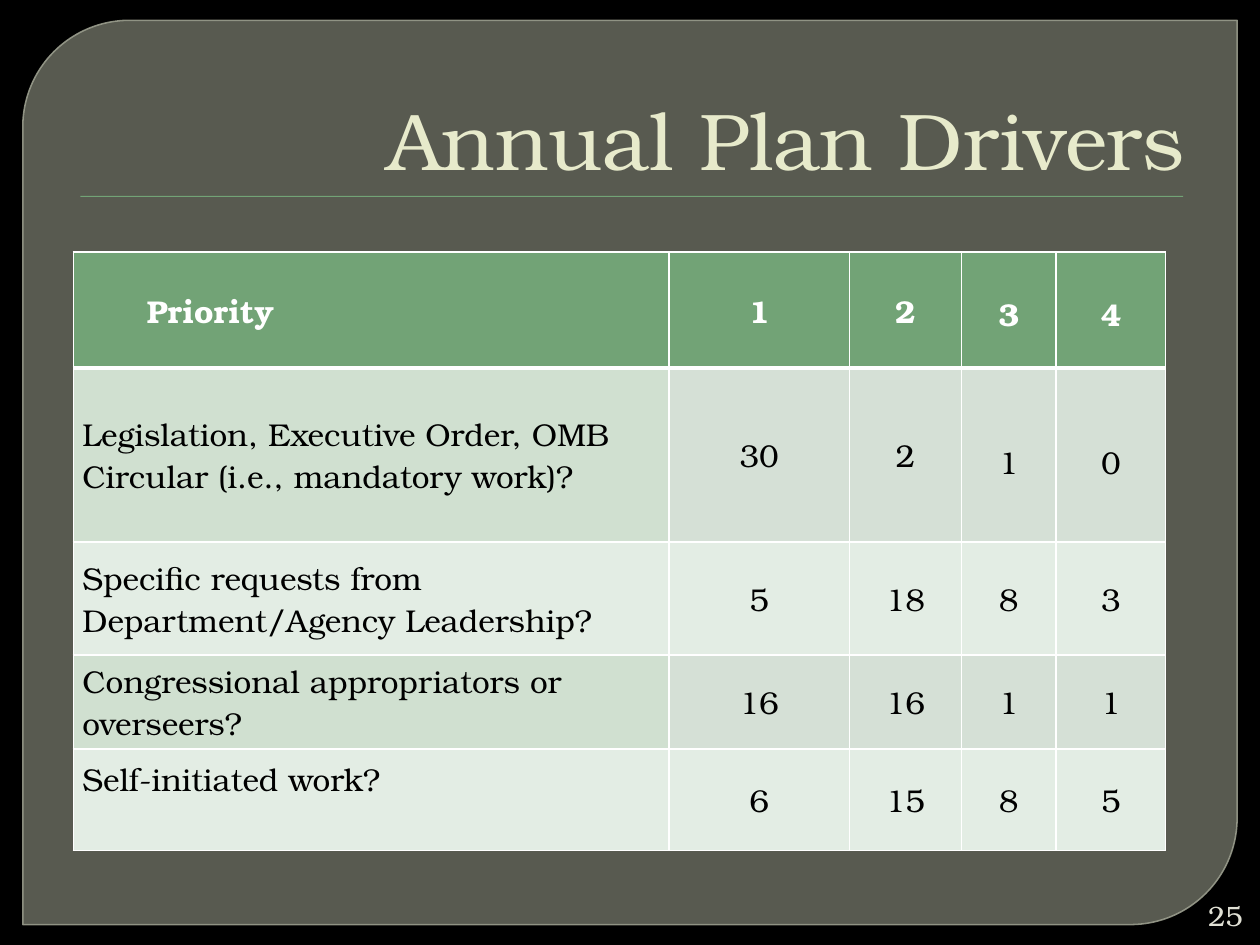
from dataclasses import dataclass

from lxml import etree
from pptx import Presentation
from pptx.dml.color import RGBColor
from pptx.enum.shapes import MSO_SHAPE
from pptx.enum.text import MSO_ANCHOR, PP_ALIGN
from pptx.oxml.ns import qn
from pptx.util import Cm, Pt

DIAGONAL_PANEL = MSO_SHAPE.ROUND_2_DIAG_RECTANGLE
RECTANGLE = MSO_SHAPE.RECTANGLE
MIDDLE, BOTTOM = MSO_ANCHOR.MIDDLE, MSO_ANCHOR.BOTTOM
LEFT, CENTER, RIGHT = PP_ALIGN.LEFT, PP_ALIGN.CENTER, PP_ALIGN.RIGHT

TITLE = "Annual Plan Drivers"
PAGE_NUMBER = "25"
ROWS = [
    ("Priority", "1", "2", "3", "4"),
    ("Legislation, Executive Order, OMB Circular (i.e., mandatory work)?", "30", "2", "1", "0"),
    ("Specific requests from Department/Agency Leadership?", "5", "18", "8", "3"),
    ("Congressional appropriators or overseers?", "16", "16", "1", "1"),
    ("Self-initiated work?", "6", "15", "8", "5"),
]
COLUMN_WIDTHS = (12.01, 3.63, 2.26, 1.91, 2.21)
ROW_HEIGHTS = (2.34, 3.51, 2.27, 1.9, 2.04)
SIDE_MARGIN = 0.18
EXTRA_MARGINS = {
    (0, 0): {"left": 1.3},
    (1, 3): {"top": 0.13},
    (1, 4): {"top": 0.13},
    (4, 0): {"bottom": 0.85},
}
LOOSE_CELLS = {(row, column) for row in (0, 1) for column in (3, 4)}


@dataclass(frozen=True)
class Theme:
    font: str = "TeX Gyre Bonum"
    background: str = "000000"
    panel: str = "888B7B"
    panel_line: str = "9DA090"
    accent: str = "72A376"
    title: str = "E7EACB"
    page: str = "E0E0D4"
    white: str = "FFFFFF"
    black: str = "000000"
    label_band: str = "D0E0D0"
    value_band: str = "D5E0D6"
    light_band: str = "E3EDE4"
    title_size: int = 46
    table_size: int = 18
    page_size: int = 16


THEME = Theme()


def set_fill(fill, color, opacity=100):
    fill.solid()
    fill.fore_color.rgb = RGBColor.from_string(color)
    if opacity < 100:
        color_node = fill._xPr.find(qn("a:solidFill"))[0]
        etree.SubElement(color_node, qn("a:alpha"), val=str(opacity * 1000))


def write(text_frame, text, size, color, alignment, bold=False):
    paragraph = text_frame.paragraphs[0]
    paragraph.alignment = alignment
    run = paragraph.add_run()
    run.text = text
    run.font.name = THEME.font
    run.font.size = Pt(size)
    run.font.bold = bold
    run.font.color.rgb = RGBColor.from_string(color)
    return paragraph


def add_plain_shape(slide, kind, box, color, opacity=100):
    shape = slide.shapes.add_shape(kind, *map(Cm, box))
    shape.shadow.inherit = False
    set_fill(shape.fill, color, opacity)
    shape.line.fill.background()
    return shape


def add_backdrop(slide):
    set_fill(slide.background.fill, THEME.background)
    panel = add_plain_shape(slide, DIAGONAL_PANEL, (0.46, 0.41, 24.48, 18.23), THEME.panel, 65)
    panel.adjustments[0], panel.adjustments[1] = 0.118, 0
    panel.line.width = Pt(0.87)
    set_fill(panel.line.fill, THEME.panel_line, 88)
    add_plain_shape(slide, RECTANGLE, (1.62, 3.95, 22.23, 0.02), THEME.accent)


def place_title(slide):
    title = slide.shapes.title
    slide.shapes._spTree.append(title._element)
    title.left, title.top, title.width, title.height = map(Cm, (1.27, 0.71, 22.86, 3.18))
    title.text_frame.vertical_anchor = BOTTOM
    title.text_frame.word_wrap = True
    write(title.text_frame, TITLE, THEME.title_size, THEME.title, RIGHT)


def set_borders(cell, is_header, below_header):
    properties = cell._tc.get_or_add_tcPr()
    widths = {"lnL": 1, "lnR": 1, "lnT": 3 if below_header else 1, "lnB": 3 if is_header else 1}
    for side, width in widths.items():
        line = etree.SubElement(properties, qn(f"a:{side}"), w=str(Pt(width)))
        fill = etree.SubElement(line, qn("a:solidFill"))
        etree.SubElement(fill, qn("a:srgbClr"), val=THEME.white)


def cell_color(row, column):
    if row == 0:
        return THEME.accent
    if row % 2 == 0:
        return THEME.light_band
    return THEME.value_band if column else THEME.label_band


def add_driver_table(slide):
    frame = slide.shapes.add_table(
        len(ROWS), len(COLUMN_WIDTHS), Cm(1.48), Cm(5.08),
        Cm(sum(COLUMN_WIDTHS)), Cm(sum(ROW_HEIGHTS)),
    )
    table = frame.table
    for column, width in zip(table.columns, COLUMN_WIDTHS):
        column.width = Cm(width)
    for row, height in zip(table.rows, ROW_HEIGHTS):
        row.height = Cm(height)
    for row, values in enumerate(ROWS):
        is_header = row == 0
        for column, text in enumerate(values):
            cell = table.cell(row, column)
            extra = EXTRA_MARGINS.get((row, column), {})
            cell.margin_left = Cm(SIDE_MARGIN + extra.get("left", 0))
            cell.margin_right = Cm(SIDE_MARGIN)
            cell.margin_top = Cm(extra.get("top", 0))
            cell.margin_bottom = Cm(extra.get("bottom", 0))
            cell.vertical_anchor = MIDDLE
            set_borders(cell, is_header, row == 1)
            set_fill(cell.fill, cell_color(row, column))
            paragraph = write(
                cell.text_frame, text, THEME.table_size,
                THEME.white if is_header else THEME.black,
                CENTER if column else LEFT, is_header,
            )
            if (row, column) in LOOSE_CELLS:
                paragraph.line_spacing = 1.15


def add_page_number(slide):
    box = slide.shapes.add_textbox(*map(Cm, (24.0, 18.08, 1.3, 0.76)))
    box.text_frame.word_wrap = True
    box.text_frame.vertical_anchor = MIDDLE
    box.text_frame.margin_top = box.text_frame.margin_bottom = 0
    write(box.text_frame, PAGE_NUMBER, THEME.page_size, THEME.page, RIGHT)


def main():
    presentation = Presentation()
    presentation.slide_width, presentation.slide_height = Cm(25.4), Cm(19.05)
    slide = presentation.slides.add_slide(presentation.slide_layouts[5])
    add_backdrop(slide)
    place_title(slide)
    add_driver_table(slide)
    add_page_number(slide)
    presentation.save("out.pptx")


if __name__ == "__main__":
    main()
